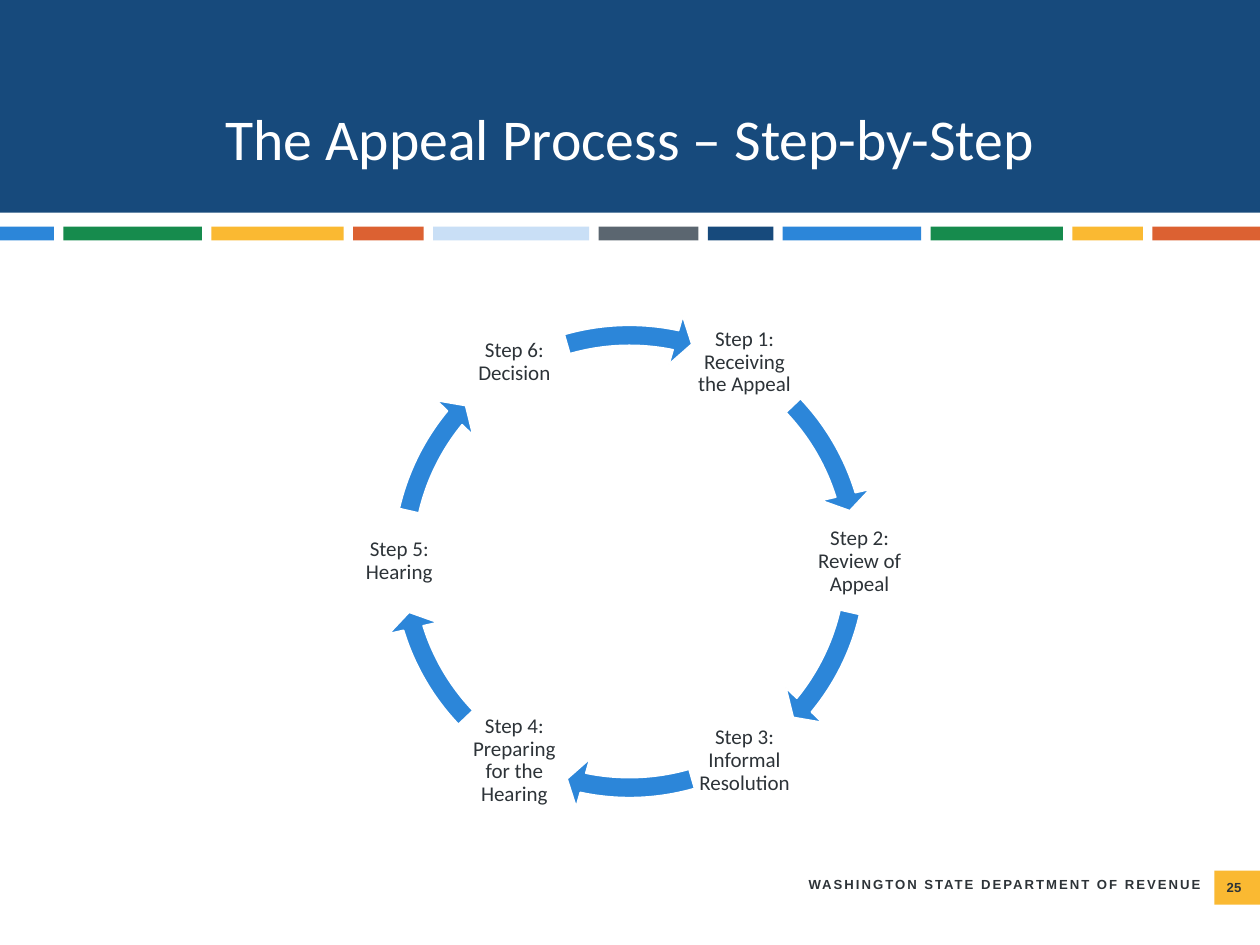
import math

import pptx
import pptx.dml.color
import pptx.enum.shapes
import pptx.enum.text
import pptx.util

Cm, Pt = pptx.util.Cm, pptx.util.Pt
rgb = pptx.dml.color.RGBColor.from_string
SHAPES = pptx.enum.shapes.MSO_SHAPE
ALIGN = pptx.enum.text.PP_ALIGN
MIDDLE = pptx.enum.text.MSO_ANCHOR.MIDDLE

NAVY, BLUE, GREEN, YELLOW = "174A7C", "2C86D9", "168B4D", "FAB932"
ORANGE, PALE, GRAY, INK, WHITE = "DC6132", "C9DFF6", "5B6670", "2D3338", "FFFFFF"


def write(frame, text, font="Arial", size=7.5, color=INK, bold=False, align=ALIGN.LEFT,
          anchor=None, line_spacing=None, inset=None, tracking=None):
    frame.word_wrap = True
    if anchor is not None:
        frame.vertical_anchor = anchor
    if inset is not None:
        frame.margin_left = frame.margin_right = Cm(inset)
        frame.margin_top = frame.margin_bottom = Cm(inset)
    paragraph = frame.paragraphs[0]
    paragraph.alignment = align
    paragraph.line_spacing = line_spacing
    run = paragraph.add_run()
    run.text = text
    run.font.name, run.font.size, run.font.bold = font, Pt(size), bold
    run.font.color.rgb = rgb(color)
    if tracking is not None:
        run.font._element.set("spc", str(round(tracking * 100)))


def add_filled(kind, left, top, width, height, fill, line=None):
    shape = slide.shapes.add_shape(kind, Cm(left), Cm(top), Cm(width), Cm(height))
    shape.shadow.inherit = False
    shape.fill.solid()
    shape.fill.fore_color.rgb = rgb(fill)
    if line:
        shape.line.color.rgb = rgb(line)
        shape.line.width = Pt(1)
    else:
        shape.line.fill.background()
    return shape


deck = pptx.Presentation()
deck.slide_width, deck.slide_height = Cm(25.4), Cm(19.05)
slide = deck.slides.add_slide(deck.slide_layouts[5])

# Banner and the row of coloured stripes below it
add_filled(SHAPES.RECTANGLE, 0, 0, 25.4, 4.29, NAVY)
stripes = [
    (1.09, BLUE), (2.79, GREEN), (2.67, YELLOW), (1.42, ORANGE), (3.15, PALE), (2.01, GRAY),
    (1.32, NAVY), (2.79, BLUE), (2.67, GREEN), (1.42, YELLOW), (2.17, ORANGE),
]
stripe_left = 0
for stripe_width, stripe_color in stripes:
    add_filled(SHAPES.RECTANGLE, stripe_left, 4.57, stripe_width, 0.28, stripe_color)
    stripe_left += stripe_width + 0.19

# Title, raised above the banner
title = slide.shapes.title
title.left, title.top, title.width, title.height = Cm(1.75), Cm(1.02), Cm(21.89), Cm(3.68)
write(title.text_frame, "The Appeal Process – Step-by-Step", font="Calibri", size=33,
      color=WHITE, align=ALIGN.CENTER, anchor=MIDDLE, line_spacing=0.9)
title.element.getparent().append(title.element)

# Footer
agency = slide.shapes.add_textbox(Cm(16.05), Cm(17.55), Cm(8.56), Cm(0.58))
write(agency.text_frame, "WASHINGTON STATE DEPARTMENT OF REVENUE", bold=True, tracking=1.1)
page_number = add_filled(SHAPES.RECTANGLE, 24.48, 17.55, 0.92, 0.69, YELLOW)
write(page_number.text_frame, "25", bold=True, anchor=MIDDLE)

# Cycle: six labels, 60 degrees apart, each followed by an arc arrow
steps = [
    "Step 1: Receiving the Appeal", "Step 2: Review of Appeal", "Step 3: Informal Resolution",
    "Step 4: Preparing for the Hearing", "Step 5: Hearing", "Step 6: Decision",
]
# Start and end degrees of half the arrows; the other half is turned by 180
arcs = [(316.4, 342.87), (12.95, 39.43), (73.99, 101.84)]
center_x, center_y, radius = 12.69, 11.32, 4.64
label_size, ring_size = 2.08, 10.13
for index, step in enumerate(steps):
    angle = math.radians(60 * index - 60)
    label = slide.shapes.add_textbox(
        Cm(center_x + radius * math.cos(angle) - label_size / 2),
        Cm(center_y + radius * math.sin(angle) - label_size / 2),
        Cm(label_size), Cm(label_size))
    write(label.text_frame, step, font="Calibri", size=12, align=ALIGN.CENTER,
          anchor=MIDDLE, line_spacing=0.9, inset=0.04)

    arrow = add_filled(SHAPES.CIRCULAR_ARROW, center_x - ring_size / 2, center_y - ring_size / 2,
                       ring_size, ring_size, BLUE, line=WHITE)
    start, end = [(degrees + 180 * (index // 3)) % 360 for degrees in arcs[index % 3]]
    # Angles are stored in 60000ths of a degree, adjustments in 100000ths
    for position, value in enumerate([0.04, 2.5, end * 0.6, start * 0.6, 0.05]):
        arrow.adjustments[position] = value

deck.save("out.pptx")
